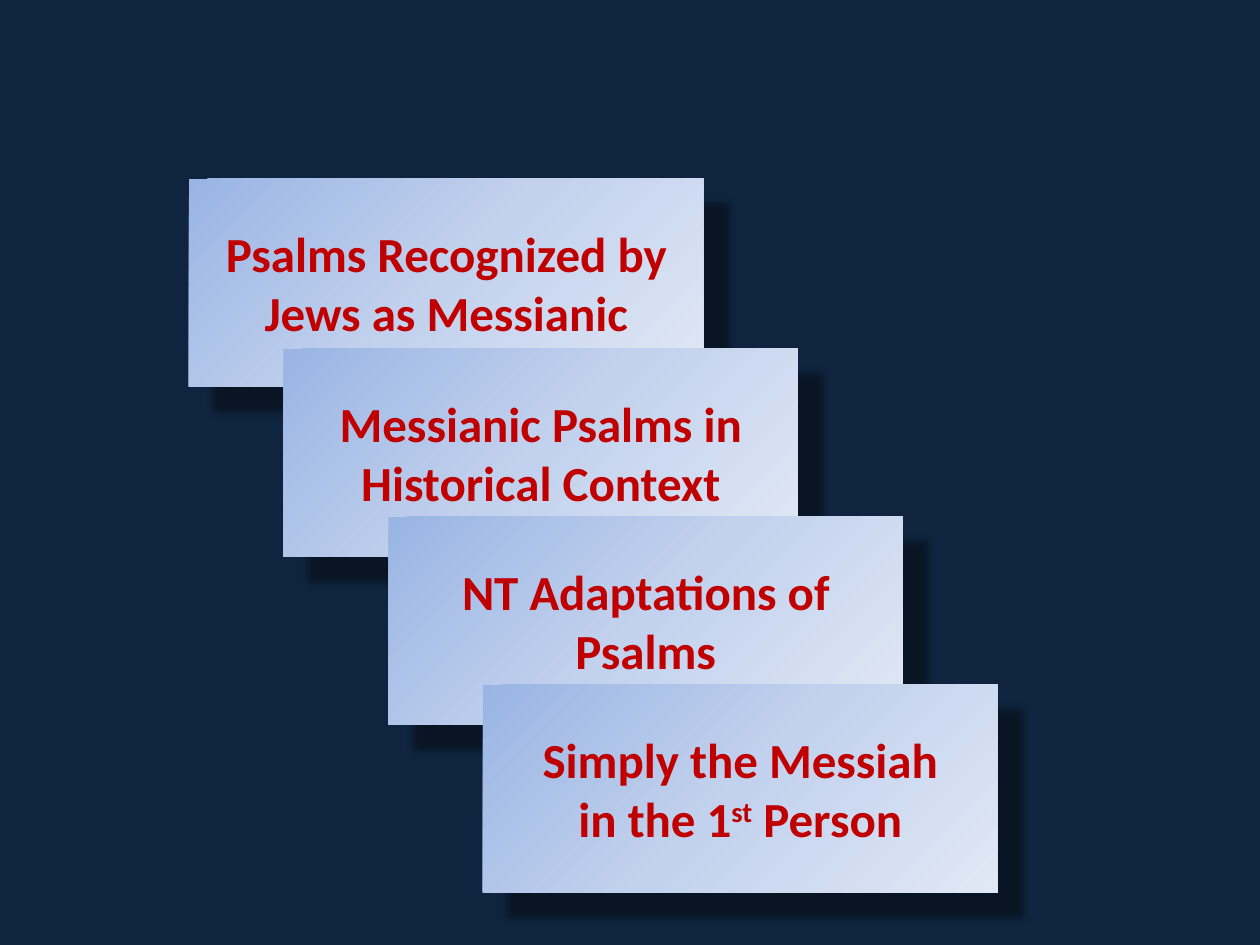
"""Build a slide of four cascading cards about the Messianic Psalms."""
from pptx import Presentation
from pptx.dml.color import RGBColor
from pptx.enum.shapes import MSO_SHAPE
from pptx.enum.text import MSO_ANCHOR, PP_ALIGN
from pptx.oxml import parse_xml
from pptx.util import Pt

NS = 'xmlns:a="http://schemas.openxmlformats.org/drawingml/2006/main"'
HUES = {"back": "0F243E", "text": "C00000", "shade": "000000",
        "start": "9AB5E4", "mid": "C2D1ED", "end": "E1E8F5"}
FONT = {"name": "Calibri", "size": Pt(28), "bold": True}
FRAME = {"word_wrap": True, "vertical_anchor": MSO_ANCHOR.TOP, "margin_top": Pt(25.6)}
CARDS = [
    (108, 102.2, [["Psalms Recognized by Jews as Messianic"]]),
    (162, 199.2, [["Messianic Psalms in Historical Context"]]),
    (222, 295.2, [["NT Adaptations of Psalms"]]),
    (276, 391.2, [["Simply the Messiah"], ["in the 1", "st", " Person"]]),
]

stops = "".join(
    f'<a:gs pos="{pos}"><a:srgbClr val="{HUES[key]}"/></a:gs>'
    for pos, key in ((0, "start"), (50000, "mid"), (100000, "end")))
GRAD = (f'<a:gradFill {NS} rotWithShape="1"><a:gsLst>{stops}</a:gsLst>'
        '<a:lin ang="2700000" scaled="0"/></a:gradFill>')
SHADE = (f'<a:outerShdw {NS} blurRad="{Pt(4)}" dist="{Pt(20)}" dir="2700000" '
         f'algn="tl" rotWithShape="0"><a:srgbClr val="{HUES["shade"]}">'
         '<a:alpha val="40000"/></a:srgbClr></a:outerShdw>')

deck = Presentation()
deck.slide_width, deck.slide_height = Pt(720), Pt(540)
slide = deck.slides.add_slide(deck.slide_layouts[6])
slide.background.fill.solid()
slide.background.fill.fore_color.rgb = RGBColor.from_string(HUES["back"])

for left, top, lines in CARDS:
    card = slide.shapes.add_shape(
        MSO_SHAPE.RECTANGLE, Pt(left), Pt(top), Pt(294), Pt(118.8))
    card.line.fill.background()
    card.shadow.inherit = False
    props = card._element.spPr
    props.find("{*}ln").addprevious(parse_xml(GRAD))
    props.find("{*}effectLst").append(parse_xml(SHADE))
    frame = card.text_frame
    for key, value in FRAME.items():
        setattr(frame, key, value)
    for row, parts in enumerate(lines):
        para = frame.add_paragraph() if row else frame.paragraphs[0]
        para.alignment = PP_ALIGN.CENTER
        for part in parts:
            run = para.add_run()
            run.text = part
            for key, value in FONT.items():
                setattr(run.font, key, value)
            run.font.color.rgb = RGBColor.from_string(HUES["text"])
            if part == "st":
                run._r.get_or_add_rPr().set("baseline", "30000")

deck.save("out.pptx")
